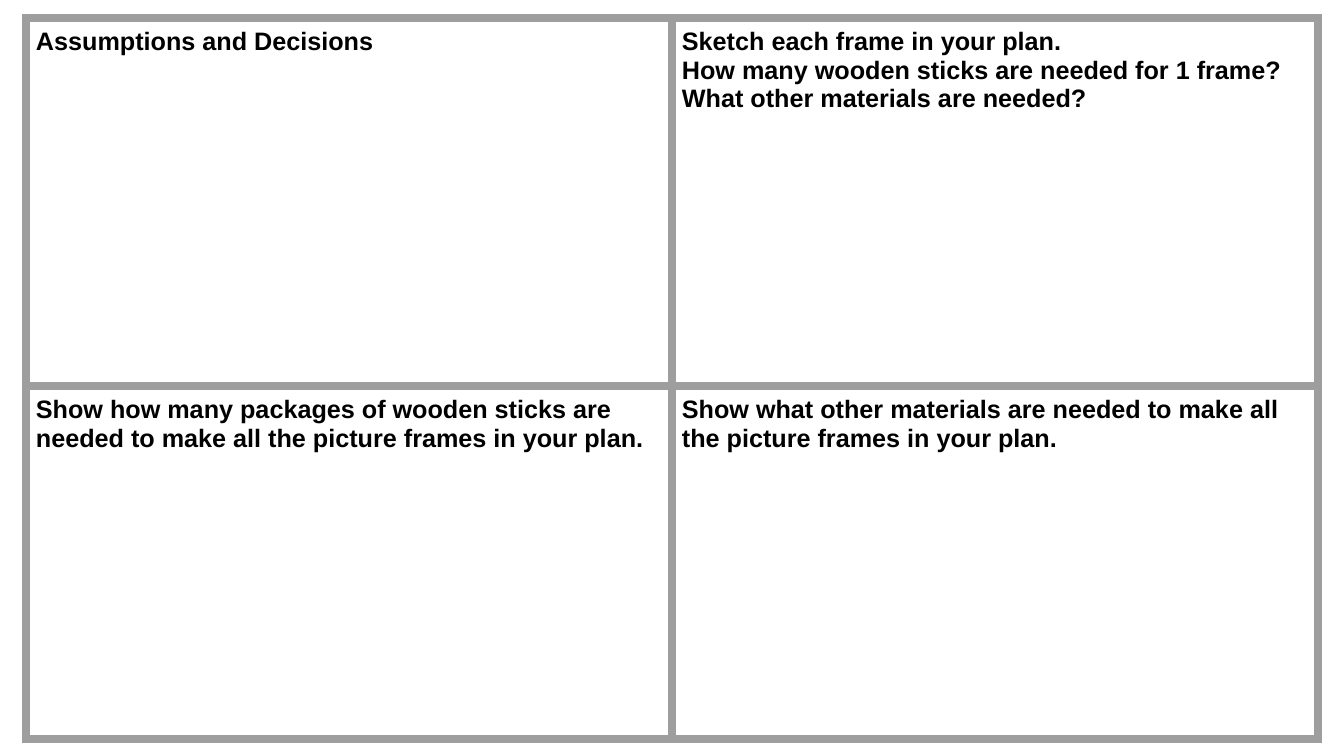
"""Build a four-part planning worksheet for a picture frame project."""
from dataclasses import dataclass

from lxml import etree
from pptx import Presentation
from pptx.dml.color import RGBColor
from pptx.enum.text import MSO_ANCHOR, PP_ALIGN
from pptx.oxml.ns import qn
from pptx.util import Pt

TOP = MSO_ANCHOR.TOP
LEFT = PP_ALIGN.LEFT
EMU_PER_PX = 914400 / 100.8


@dataclass
class Theme:
    font: str = "Arial"
    size: int = 18
    border_width: int = 6
    text: str = "000000"
    paper: str = "FFFFFF"
    border: str = "9E9E9E"


def px(length):
    return round(length * EMU_PER_PX)


def add_borders(cell):
    properties = cell._tc.get_or_add_tcPr()
    for position, side in enumerate(("lnL", "lnR", "lnT", "lnB")):
        line = etree.Element(qn(f"a:{side}"), w=str(Pt(theme.border_width)))
        fill = etree.SubElement(line, qn("a:solidFill"))
        etree.SubElement(fill, qn("a:srgbClr"), val=theme.border)
        properties.insert(position, line)


theme = Theme()
COLUMN_WIDTHS = (646, 646)
ROW_HEIGHTS = (368, 353)
CELL_MARGIN = 10
PROMPTS = (
    (
        ("Assumptions and Decisions",),
        (
            "Sketch each frame in your plan.",
            "How many wooden sticks are needed for 1 frame?",
            "What other materials are needed?",
        ),
    ),
    (
        ("Show how many packages of wooden sticks are needed to make all the picture frames in your plan.",),
        ("Show what other materials are needed to make all the picture frames in your plan.",),
    ),
)

deck = Presentation()
deck.slide_width = px(1344)
deck.slide_height = px(756)
page = deck.slides.add_slide(deck.slide_layouts[6])

worksheet = page.shapes.add_table(
    len(ROW_HEIGHTS), len(COLUMN_WIDTHS),
    px(26), px(18), px(sum(COLUMN_WIDTHS)), px(sum(ROW_HEIGHTS)),
).table
worksheet.first_row = False
worksheet.horz_banding = False
for column, width in zip(worksheet.columns, COLUMN_WIDTHS):
    column.width = px(width)
for row, height in zip(worksheet.rows, ROW_HEIGHTS):
    row.height = px(height)

for row, row_prompts in zip(worksheet.rows, PROMPTS):
    for cell, prompts in zip(row.cells, row_prompts):
        cell.fill.solid()
        cell.fill.fore_color.rgb = RGBColor.from_string(theme.paper)
        add_borders(cell)
        cell.vertical_anchor = TOP
        cell.margin_left = cell.margin_right = px(CELL_MARGIN)
        cell.margin_top = cell.margin_bottom = px(CELL_MARGIN)
        cell.text = "\n".join(prompts)
        for para in cell.text_frame.paragraphs:
            para.alignment = LEFT
            para.font.name = theme.font
            para.font.size = Pt(theme.size)
            para.font.bold = True
            para.font.color.rgb = RGBColor.from_string(theme.text)

deck.save("out.pptx")
